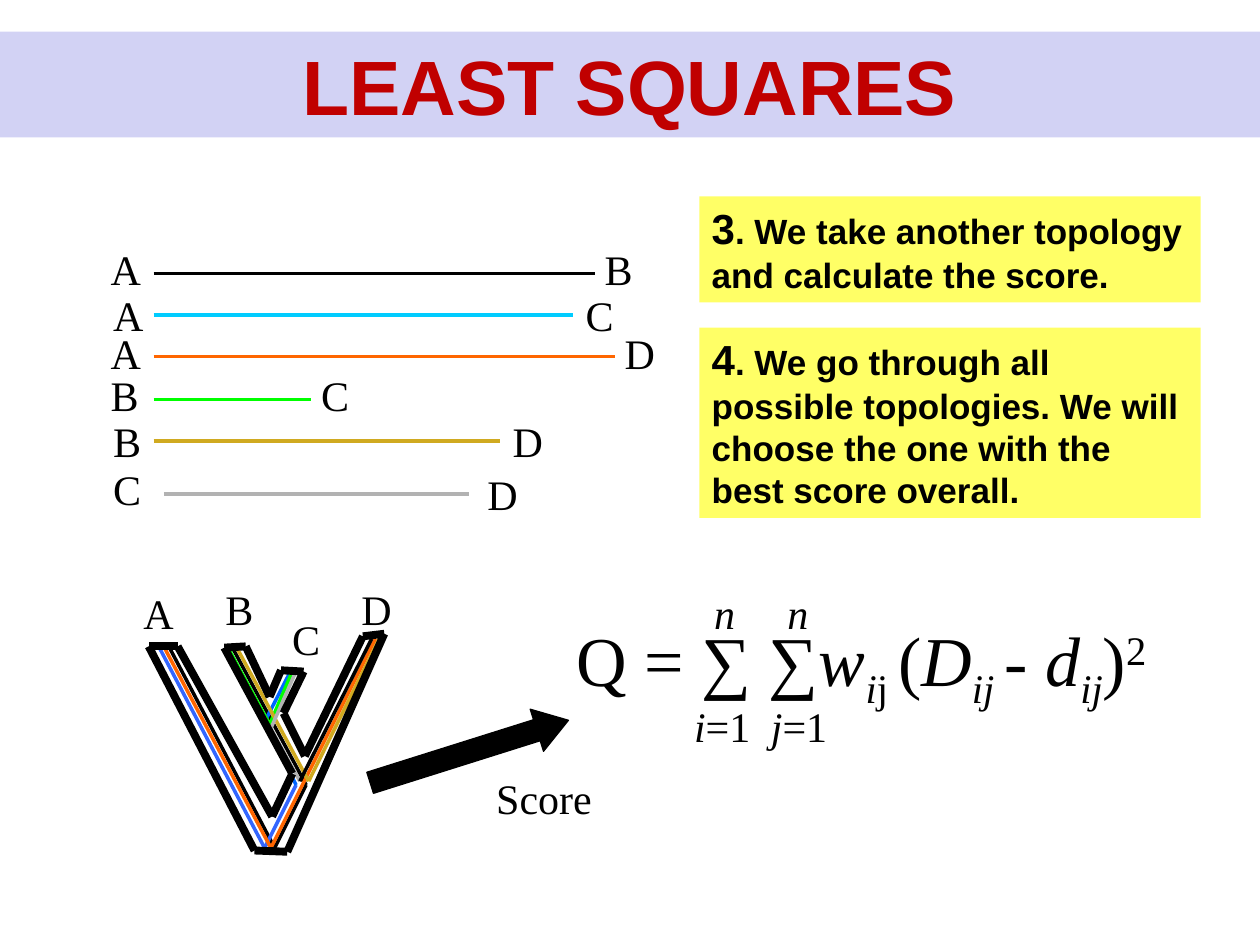
import itertools
from dataclasses import dataclass

import pptx
import pptx.dml.color
import pptx.enum.shapes
import pptx.enum.text
import pptx.oxml.ns
import pptx.util
from lxml import etree


@dataclass(frozen=True)
class Theme:
    """Colours, fonts and type sizes of the slide."""

    black: str = "000000"
    red: str = "C00000"
    lavender: str = "D2D2F4"
    yellow: str = "FFFF66"
    cyan: str = "00CCFF"
    orange: str = "FF6600"
    green: str = "00FF00"
    gold: str = "D0AA20"
    gray: str = "B2B2B2"
    blue: str = "3366FF"
    bright_blue: str = "0066FF"
    sans: str = "Arial"
    serif: str = "Times New Roman"
    title_size: int = 44
    formula_size: int = 40
    label_size: int = 24
    body_size: int = 20
    thin: float = 2
    thick: float = 4.5


class SlideBuilder:
    """Draws elements on a grid of 100 columns by 75 rows."""

    cell = pptx.util.Inches(0.1)

    def __init__(self, presentation, theme):
        """Set the page size and start a title-only slide."""
        presentation.slide_width = 100 * self.cell
        presentation.slide_height = 75 * self.cell
        self.theme = theme
        self.slide = presentation.slides.add_slide(presentation.slide_layouts[5])
        self.shapes = self.slide.shapes

    def lengths(self, *cells):
        """Turn grid cells into slide units."""
        return [round(cell * self.cell) for cell in cells]

    def color(self, value):
        """Turn a hex string into a colour."""
        return pptx.dml.color.RGBColor.from_string(value)

    def fill(self, shape, color):
        """Give a shape a solid fill."""
        shape.fill.solid()
        shape.fill.fore_color.rgb = self.color(color)

    def set_runs(self, shape, runs, font, color=None, wrap=True, **frame_format):
        """Put (text, font format, baseline) runs into a shape."""
        frame = shape.text_frame
        frame_format = {
            "word_wrap": wrap,
            "auto_size": pptx.enum.text.MSO_AUTO_SIZE.SHAPE_TO_FIT_TEXT,
            "vertical_anchor": pptx.enum.text.MSO_ANCHOR.TOP,
            **frame_format,
        }
        for name, value in frame_format.items():
            setattr(frame, name, value)
        paragraph = frame.paragraphs[0]
        paragraph.alignment = pptx.enum.text.PP_ALIGN.LEFT
        for text, run_format, baseline in runs:
            run = paragraph.add_run()
            run.text = text
            for name, value in {**font, **run_format}.items():
                setattr(run.font, name, value)
            run.font.color.rgb = self.color(color or self.theme.black)
            if baseline:
                run._r.get_or_add_rPr().set("baseline", str(baseline * 1000))
        return paragraph

    def title(self, text, *box):
        """Place the title as a full-width band."""
        title = self.shapes.title
        title.left, title.top, title.width, title.height = self.lengths(*box)
        self.fill(title, self.theme.lavender)
        font = {"name": self.theme.sans, "size": pptx.util.Pt(self.theme.title_size), "bold": True}
        paragraph = self.set_runs(
            title, [(text, {}, 0)], font, self.theme.red,
            auto_size=pptx.enum.text.MSO_AUTO_SIZE.NONE,
            vertical_anchor=pptx.enum.text.MSO_ANCHOR.MIDDLE,
        )
        paragraph.alignment = pptx.enum.text.PP_ALIGN.CENTER

    def text(self, runs, left, top, width=4.3, height=5, size=None, shapes=None):
        """Add an unwrapped serif text box."""
        box = (shapes or self.shapes).add_textbox(*self.lengths(left, top, width, height))
        font = {"name": self.theme.serif, "size": pptx.util.Pt(size or self.theme.label_size)}
        self.set_runs(box, [(runs, {}, 0)] if isinstance(runs, str) else runs, font, wrap=False)

    def step(self, number, text, *box):
        """Add a numbered yellow step."""
        shape = self.shapes.add_shape(
            pptx.enum.shapes.MSO_SHAPE.RECTANGLE, *self.lengths(*box))
        shape.shadow.inherit = False
        self.fill(shape, self.theme.yellow)
        shape.line.fill.background()
        font = {"name": self.theme.sans, "size": pptx.util.Pt(self.theme.body_size), "bold": True}
        number_format = {"size": pptx.util.Pt(self.theme.label_size)}
        self.set_runs(shape, [(number, number_format, 0), (text, {}, 0)], font)

    def path_lines(self, color, width, *points):
        """Join successive points with straight lines."""
        for start, end in itertools.pairwise(points):
            line = self.shapes.add_connector(
                pptx.enum.shapes.MSO_CONNECTOR.STRAIGHT, *self.lengths(*start, *end))
            line.line.color.rgb = self.color(color)
            line.line.width = pptx.util.Pt(width)
            etree.SubElement(line._element.spPr, pptx.oxml.ns.qn("a:effectLst"))

    def block_arrow(self, rotation, *box):
        """Add a rotated black arrow."""
        arrow = self.shapes.add_shape(
            pptx.enum.shapes.MSO_SHAPE.RIGHT_ARROW, *self.lengths(*box))
        arrow.shadow.inherit = False
        arrow.rotation = rotation
        arrow.adjustments[1] = 0.75
        self.fill(arrow, self.theme.black)
        arrow.line.color.rgb = self.color(self.theme.black)
        arrow.line.width = pptx.util.Pt(0.75)

    def formula(self):
        """Add the least squares sum with its limits as one group."""
        shapes = self.shapes.add_group_shape().shapes
        italic = {"italic": True}
        runs = [
            ("Q = ∑ ∑", {}, 0), ("w", italic, 0), ("i", italic, -25), ("j ", {}, -25),
            ("(", {}, 0), ("D", italic, 0), ("ij ", italic, -25), ("- ", {}, 0),
            ("d", italic, 0), ("ij", italic, -25), (")", {}, 0), ("2", {}, 30),
        ]
        self.text(runs, 44.8, 48.4, 49.8, 7.7, self.theme.formula_size, shapes)
        for index, limit_left, start_left in (("i", 55.7, 54.1), ("j", 61.5, 60.2)):
            self.text([("n", italic, 0)], limit_left, 46.1, 3.7, shapes=shapes)
            self.text([(index, italic, 0), ("=1", {}, 0)], start_left, 55.1, 6.5, shapes=shapes)


def main():
    """Build and save the slide."""
    presentation = pptx.Presentation()
    theme = Theme()
    builder = SlideBuilder(presentation, theme)
    builder.title("LEAST SQUARES", 0, 2.5, 100, 8.4)

    distances = [
        ("A", 7.8, 18.8, "B", 47, 18.8, theme.black, 12.2, 47.2, 21.7),
        ("A", 8, 22.5, "C", 45.5, 22.5, theme.cyan, 12.2, 45.5, 25),
        ("A", 7.8, 25.5, "D", 48.6, 25.5, theme.orange, 12.2, 48.8, 28.3),
        ("B", 7.8, 28.8, "C", 24.5, 28.8, theme.green, 12.2, 24.7, 31.7),
        ("B", 8, 32.5, "D", 39.7, 32.5, theme.gold, 12.2, 39.7, 35),
        ("C", 8, 36.3, "D", 37.7, 36.7, theme.gray, 13, 37.2, 39.2),
    ]
    for first, left, top, second, right, right_top, color, start, end, row in distances:
        builder.path_lines(color, theme.thin, (start, row), (end, row))
        builder.text(first, left, top)
        builder.text(second, right, right_top)

    builder.step("3", ". We take another topology and calculate the score.", 55.5, 15.6, 39.8, 8.4)
    builder.step(
        "4",
        ". We go through all possible topologies. We will choose the one with the best score overall.",
        55.5, 26, 39.8, 15.1,
    )

    builder.block_arrow(342.5, 29, 57.9, 16.5, 3.5)
    builder.text("Score", 38.4, 60.8, 9.7)
    builder.formula()

    for name, left, top in (("A", 10.4, 46.1), ("B", 16.9, 45.8), ("C", 22.2, 48.2), ("D", 27.7, 45.8)):
        builder.text(name, left, top)

    routes = [
        (theme.black, (13.5, 51.5), (21.8, 67.3), (24.3, 62.3), (18.5, 51.5)),
        (theme.blue, (12.7, 51.5), (21, 67.3), (23.5, 62.3)),
        (theme.bright_blue, (23.5, 62.3), (21, 57.3), (23.1, 53.2)),
        (theme.orange, (13.1, 51.5), (21.5, 67.3), (29.8, 50.7)),
        (theme.green, (18.2, 51.6), (21.4, 57.5), (23.2, 53.3)),
        (theme.gold, (18.9, 51.6), (24.5, 62), (30.1, 50.7)),
        (theme.gray, (23.4, 53.5), (21.5, 57.8), (23.8, 62)),
        (theme.black, (23.8, 62), (29.5, 50.7)),
    ]
    for color, *points in routes:
        builder.path_lines(color, theme.thin, *points)

    outline = [
        (11.8, 51.3), (20.2, 67.5), (22.8, 67.6), (30.5, 50.3), (28.8, 50.5),
        (24.2, 60), (22.5, 56.6), (24.1, 53.3), (22.3, 53.2), (21.4, 55.3),
        (19.5, 51.3), (17.8, 51.4), (23.2, 61.4), (21.6, 64.8), (14.1, 51.3),
    ]
    builder.path_lines(theme.black, theme.thick, *outline, outline[0])
    presentation.save("out.pptx")


if __name__ == "__main__":
    main()
